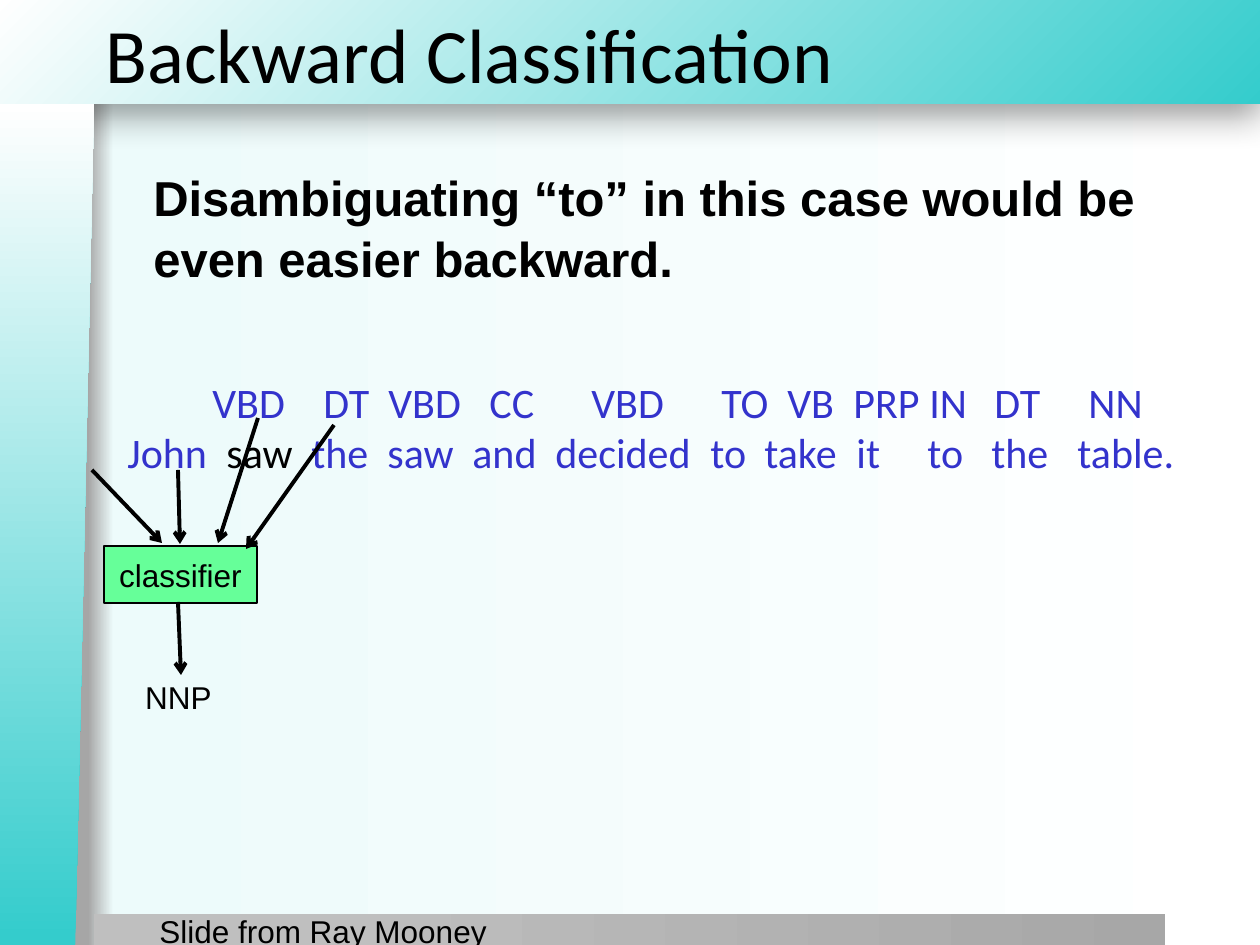
from pptx import Presentation
from pptx.dml.color import RGBColor
from pptx.enum.shapes import MSO_CONNECTOR, MSO_SHAPE
from pptx.enum.text import MSO_ANCHOR, PP_ALIGN
from pptx.oxml import parse_xml
from pptx.oxml.ns import nsdecls, qn
from pptx.oxml.xmlchemy import OxmlElement
from pptx.util import Pt

PX = 914400 / 126
BLACK, BLUE, TEAL, WHITE = "000000", "3333CC", "34CCCC", "FFFFFF"
SENTENCE_LEFT = 127

# Each word or tag with the px where it starts
TAGS = [("VBD", 212), ("DT", 323), ("VBD", 388), ("CC", 489), ("VBD", 591), ("TO", 721),
        ("VB", 787), ("PRP", 853), ("IN", 929), ("DT", 994), ("NN", 1088)]
WORDS = [("John", SENTENCE_LEFT), ("saw", 226), ("the", 311), ("saw", 387), ("and", 472),
         ("decided", 555), ("to", 710), ("take", 764), ("it", 856), ("to", 927),
         ("the", 991), ("table.", 1077)]
CURRENT_WORD = 1

ARROWS = [((92, 470), (162, 543)), ((258, 418), (218, 543)), ((178, 470), (180, 544)),
          ((178, 602), (181, 675)), ((334, 425), (246, 549))]


def px(*values):
    return [round(value * PX) for value in values]


def color(value):
    return RGBColor.from_string(value)


def paint_gradient(fill, owner, stops, direction='<a:lin ang="0" scaled="0"/>'):
    """Give the fill inside the owner element its stops of (percent, colour)."""
    fill.gradient()
    gradient = owner.find(".//" + qn("a:gradFill"))
    stop_xml = "".join(f'<a:gs pos="{percent * 1000}"><a:srgbClr val="{value}"/></a:gs>'
                       for percent, value in stops)
    gradient.getparent().replace(gradient, parse_xml(
        f'<a:gradFill {nsdecls("a")} rotWithShape="1"><a:gsLst>{stop_xml}</a:gsLst>'
        f'{direction}</a:gradFill>'))


def add_panel(page, kind, box, stops, **gradient_options):
    panel = page.shapes.add_shape(kind, *px(*box))
    panel.shadow.inherit = False
    panel.line.fill.background()
    paint_gradient(panel.fill, panel._element, stops, **gradient_options)
    return panel


def add_drop_shadow(shape):
    effects = shape._element.spPr.find(qn("a:effectLst"))
    effects.append(parse_xml(
        f'<a:outerShdw {nsdecls("a")} blurRad="{Pt(20)}" dist="{Pt(6)}" dir="5400000" '
        'algn="t" rotWithShape="0"><a:srgbClr val="000000"><a:alpha val="40000"/>'
        '</a:srgbClr></a:outerShdw>'))


def add_frame(page):
    paint_gradient(page.background.fill, page._element,
                   [(7, "A6A6A6"), (9, "EDFBFB"), (100, WHITE)])
    header = add_panel(
        page, MSO_SHAPE.RECTANGLE, (-1, 0, 1261, 104), [(0, TEAL), (100, WHITE)],
        direction='<a:path path="circle"><a:fillToRect l="100000" t="100000"/></a:path>')
    add_drop_shadow(header)
    add_panel(page, MSO_SHAPE.RECTANGLE, (94, 914, 1071, 33), [(20, "BFBFBF"), (100, "A7A7A7")])
    side = add_panel(page, MSO_SHAPE.FLOWCHART_MANUAL_INPUT, (-374, 478, 842, 94),
                     [(1, TEAL), (100, WHITE)])
    side.rotation = 270
    side._element.spPr.find(qn("a:xfrm")).set("flipV", "1")


def style_span(span, size, font, value, bold=False):
    span.font.size = Pt(size)
    span.font.name = font
    span.font.bold = bold
    span.font.color.rgb = color(value)


def write(shape, text, size, font="Arial", bold=False, align=PP_ALIGN.LEFT,
          anchor=MSO_ANCHOR.TOP, spacing=1.0):
    frame = shape.text_frame
    frame.word_wrap = True
    frame.vertical_anchor = anchor
    frame.text = text
    para = frame.paragraphs[0]
    para.alignment = align
    para.line_spacing = spacing
    style_span(para.runs[0], size, font, BLACK, bold)


def add_text(page, box, text, size, **options):
    write(page.shapes.add_textbox(*px(*box)), text, size, **options)


def fill_row(para, entries, highlighted=None):
    """Set entries on tab stops, one run each."""
    stops = OxmlElement("a:tabLst")
    for index, (word, left) in enumerate(entries):
        offset = left - SENTENCE_LEFT
        if offset:
            stop = OxmlElement("a:tab")
            stop.set("pos", str(px(offset)[0]))
            stop.set("algn", "l")
            stops.append(stop)
        span = para.add_run()
        span.text = "\t" + word if offset else word
        style_span(span, 24, "Calibri", BLACK if index == highlighted else BLUE)
    para._p.get_or_add_pPr().append(stops)


def add_tagged_sentence(page):
    frame = page.shapes.add_textbox(*px(115, 370, 1089, 115)).text_frame
    frame.word_wrap = True
    fill_row(frame.paragraphs[0], TAGS)
    fill_row(frame.add_paragraph(), WORDS, CURRENT_WORD)


def add_classifier(page):
    box = page.shapes.add_shape(MSO_SHAPE.RECTANGLE, *px(104, 546, 153, 57))
    box.shadow.inherit = False
    box.fill.solid()
    box.fill.fore_color.rgb = color("66FF99")
    box.line.color.rgb = color(BLACK)
    box.line.width = Pt(1)
    write(box, "classifier", 18, align=PP_ALIGN.CENTER, anchor=MSO_ANCHOR.MIDDLE)


def add_arrow(page, start, end):
    arrow = page.shapes.add_connector(MSO_CONNECTOR.STRAIGHT, *px(*start, *end))
    arrow.line.color.rgb = color(BLACK)
    arrow.line.width = Pt(2.25)
    head = OxmlElement("a:tailEnd")
    head.set("type", "arrow")
    arrow.line._get_or_add_ln().append(head)
    arrow._element.spPr.append(OxmlElement("a:effectLst"))


def main():
    deck = Presentation()
    deck.slide_width, deck.slide_height = px(1260, 945)
    page = deck.slides.add_slide(deck.slide_layouts[6])
    add_frame(page)
    add_text(page, (93, -10, 1167, 126), "Backward Classification", 44,
             font="Calibri", anchor=MSO_ANCHOR.MIDDLE)
    add_text(page, (141, 158, 1071, 722),
             "Disambiguating “to” in this case would be even easier backward.", 28,
             bold=True, spacing=1.05)
    add_tagged_sentence(page)
    add_classifier(page)
    for start, end in ARROWS:
        add_arrow(page, start, end)
    add_text(page, (130, 672, 97, 54), "NNP", 18, align=PP_ALIGN.CENTER)
    add_text(page, (147, 906, 431, 32), "Slide from Ray Mooney", 18)
    deck.save("out.pptx")


if __name__ == "__main__":
    main()
